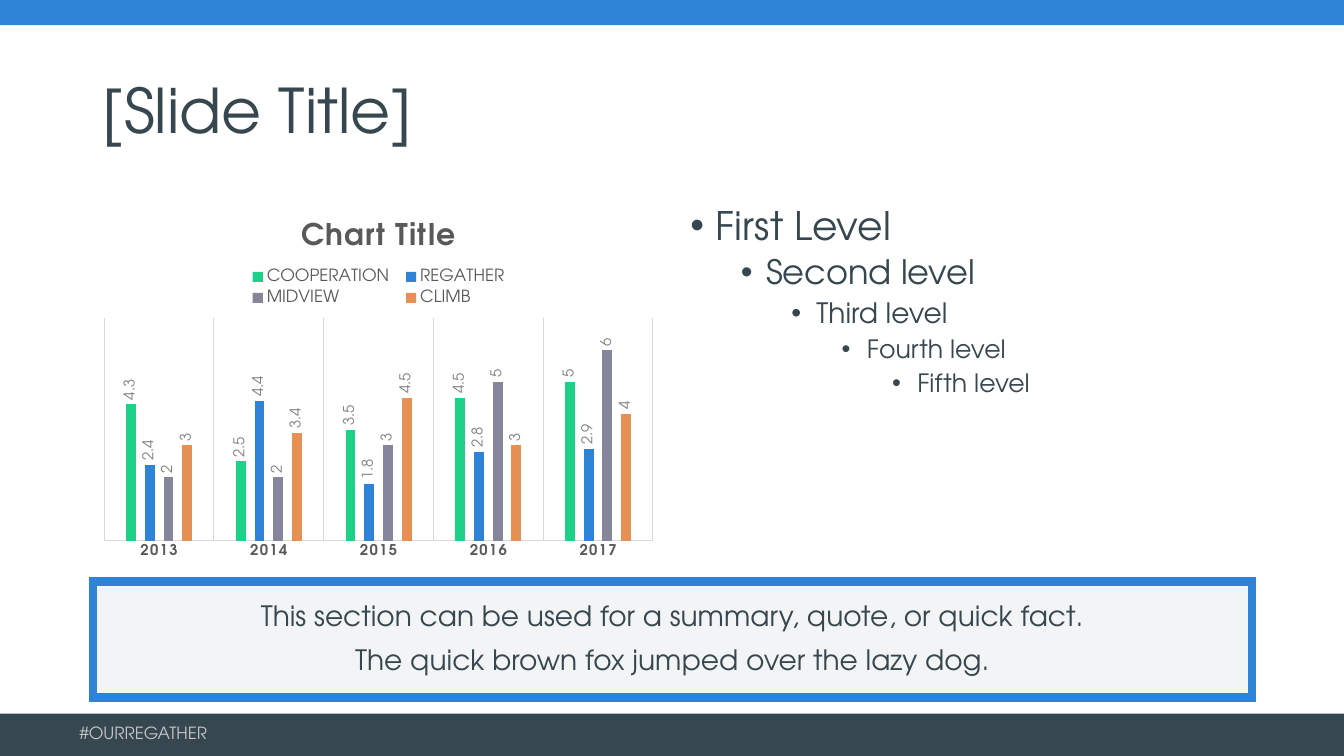
import pptx
import pptx.chart.data
import pptx.dml.color
import pptx.enum.chart
import pptx.enum.shapes
import pptx.enum.text
import pptx.oxml
import pptx.oxml.ns
import pptx.util
from lxml import etree

TITLE = "[Slide Title]"
HASHTAG = "#OURREGATHER"
CHART_TITLE = "Chart Title"
YEARS = ["2013", "2014", "2015", "2016", "2017"]
EVENTS = [
    ("COOPERATION", "1DD189", (4.3, 2.5, 3.5, 4.5, 5)),
    ("REGATHER", "2F83D6", (2.4, 4.4, 1.8, 2.8, 2.9)),
    ("MIDVIEW", "85859C", (2, 2, 3, 5, 6)),
    ("CLIMB", "E69153", (3, 3.4, 4.5, 3, 4)),
]
OUTLINE = [("First Level", 28), ("Second level", 24), ("Third level", 20),
           ("Fourth level", 18), ("Fifth level", 18)]
SUMMARY = ["This section can be used for a summary, quote, or quick fact.",
           "The quick brown fox jumped over the lazy dog."]

FONT = "TeX Gyre Adventor"
SLATE, BLUE, PALE = "37474F", "2F83D6", "F3F4F5"
FOOTER_GREY, CHART_GREY, LABEL_GREY, RULE_GREY = "C3C7CA", "595959", "808080", "D9D9D9"

WIDTH, HEIGHT = 13.33, 7.5
MARGIN, GUTTER = 0.92, 0.16
CONTENT_WIDTH = 11.5
COLUMN_WIDTH = (CONTENT_WIDTH - GUTTER) / 2
BODY_TOP, BODY_HEIGHT = 2, 3.62
FOOTER_HEIGHT = 0.42
FOOTER_TOP = HEIGHT - FOOTER_HEIGHT
INDENT, HANG = 0.5, 0.25


def rgb(colour):
    return pptx.dml.color.RGBColor.from_string(colour)


def box(left, top, width, height):
    return [pptx.util.Inches(length) for length in (left, top, width, height)]


def style(font, size, colour, bold=False):
    font.name, font.size, font.bold = FONT, pptx.util.Pt(size), bold
    font.color.rgb = rgb(colour)


def write(paragraph, text, size, colour, space=0):
    paragraph.text = text
    paragraph.line_spacing = 0.9
    paragraph.space_before = pptx.util.Pt(space)
    style(paragraph.runs[0].font, size, colour)


def add_band(slide, area, fill):
    band = slide.shapes.add_shape(pptx.enum.shapes.MSO_SHAPE.RECTANGLE, *box(*area))
    band.shadow.inherit = False
    band.fill.solid()
    band.fill.fore_color.rgb = rgb(fill)
    band.line.fill.background()
    return band


def add_text(slide, area):
    frame = slide.shapes.add_textbox(*box(*area)).text_frame
    frame.word_wrap = True
    return frame


def place(parent, after, x, y, w, h, inner=False):
    """Fix a chart part's area, in shares of the chart's size."""
    tag = pptx.oxml.ns.qn
    for old in parent.findall(tag("c:layout")):
        parent.remove(old)
    layout = etree.Element(tag("c:layout"))
    manual = etree.SubElement(layout, tag("c:manualLayout"))
    settings = [("layoutTarget", "inner")] if inner else []
    settings += [("xMode", "edge"), ("yMode", "edge"), ("x", x), ("y", y), ("w", w), ("h", h)]
    for name, value in settings:
        etree.SubElement(manual, tag("c:" + name)).set("val", str(value))
    parent.insert(after, layout)


def add_event_chart(slide):
    data = pptx.chart.data.CategoryChartData()
    data.categories = YEARS
    for name, _, values in EVENTS:
        data.add_series(name, values)
    chart = slide.shapes.add_chart(
        pptx.enum.chart.XL_CHART_TYPE.COLUMN_CLUSTERED,
        *box(MARGIN, BODY_TOP, COLUMN_WIDTH, BODY_HEIGHT), data).chart
    style(chart.font, 10, "000000")

    chart.has_title = True
    heading = chart.chart_title.text_frame.paragraphs[0]
    heading.text = CHART_TITLE
    style(heading.runs[0].font, 21.3, CHART_GREY, bold=True)
    chart.chart_title.include_in_layout = False

    chart.has_legend = True
    legend = chart.legend
    legend.position = pptx.enum.chart.XL_LEGEND_POSITION.TOP
    legend.include_in_layout = False
    style(legend.font, 12, CHART_GREY)
    place(legend._element, 1, 0.26, 0.17, 0.48, 0.13)

    plot = chart.plots[0]
    plot.gap_width, plot.overlap, plot.vary_by_categories = 444, -90, False
    place(chart._chartSpace.chart.plotArea, 0, 0.02, 0.32, 0.96, 0.61, inner=True)
    for series, (_, colour, _) in zip(plot.series, EVENTS):
        series.format.fill.solid()
        series.format.fill.fore_color.rgb = rgb(colour)
        labels = series.data_labels
        labels.show_value = True
        labels.position = pptx.enum.chart.XL_LABEL_POSITION.OUTSIDE_END
        style(labels.font, 10.6, LABEL_GREY)
        for body in labels._element.xpath("c:txPr/a:bodyPr"):
            body.set("rot", "-5400000")
            body.set("vert", "horz")

    years = chart.category_axis
    years.major_tick_mark = years.minor_tick_mark = pptx.enum.chart.XL_TICK_MARK.NONE
    years.has_major_gridlines = True
    style(years.tick_labels.font, 10.6, CHART_GREY, bold=True)
    for line in (years.format.line, years.major_gridlines.format.line):
        line.color.rgb = rgb(RULE_GREY)
        line.width = pptx.util.Pt(0.75)
    scale = chart.value_axis
    scale.minimum_scale, scale.maximum_scale = 0, 7
    scale.has_major_gridlines = False
    scale.visible = False

    spaced = chart.chart_title._element.xpath(".//a:rPr")
    spaced += years._element.xpath("c:txPr//a:defRPr")
    for properties in spaced:
        properties.set("spc", "100")


def add_outline(slide):
    left = MARGIN + COLUMN_WIDTH + GUTTER
    frame = add_text(slide, (left, BODY_TOP, COLUMN_WIDTH, BODY_HEIGHT))
    for level, (text, size) in enumerate(OUTLINE):
        paragraph = frame.add_paragraph() if level else frame.paragraphs[0]
        write(paragraph, text, size, SLATE, 5 if level else 10)
        paragraph.level = level
        properties = paragraph._p.get_or_add_pPr()
        properties.set("marL", str(pptx.util.Inches(HANG + level * INDENT)))
        properties.set("indent", str(-pptx.util.Inches(HANG)))
        for name, key, value in (("a:buFont", "typeface", "Arial"), ("a:buChar", "char", "•")):
            etree.SubElement(properties, pptx.oxml.ns.qn(name)).set(key, value)


def add_summary(slide):
    panel = add_band(slide, (MARGIN, 5.77, CONTENT_WIDTH, 1.15), PALE)
    panel.line.color.rgb = rgb(BLUE)
    panel.line.width = pptx.util.Pt(6)
    for outline in panel._element.xpath("p:spPr/a:ln"):
        etree.SubElement(outline, pptx.oxml.ns.qn("a:miter")).set("lim", "800000")
    frame = panel.text_frame
    frame.word_wrap = True
    frame.vertical_anchor = pptx.enum.text.MSO_ANCHOR.MIDDLE
    frame.margin_left = frame.margin_right = pptx.util.Inches(0.5)
    frame.margin_top = frame.margin_bottom = pptx.util.Inches(0.2)
    for number, sentence in enumerate(SUMMARY):
        paragraph = frame.add_paragraph() if number else frame.paragraphs[0]
        write(paragraph, sentence, 20, SLATE, 10)
        paragraph.alignment = pptx.enum.text.PP_ALIGN.CENTER


def main():
    deck = pptx.Presentation()
    deck.slide_width, deck.slide_height = box(0, 0, WIDTH, HEIGHT)[2:]
    slide = deck.slides.add_slide(deck.slide_layouts[5])

    add_band(slide, (0, FOOTER_TOP, WIDTH, FOOTER_HEIGHT), SLATE)
    add_band(slide, (0, 0, WIDTH, 0.25), BLUE)
    footer = add_text(slide, (0.69, FOOTER_TOP, 2.25, 0.4))
    footer.vertical_anchor = pptx.enum.text.MSO_ANCHOR.MIDDLE
    write(footer.paragraphs[0], HASHTAG, 12, FOOTER_GREY)

    title = slide.shapes.title
    title.left, title.top, title.width, title.height = box(MARGIN, 0.4, CONTENT_WIDTH, 1.45)
    title.text_frame.vertical_anchor = pptx.enum.text.MSO_ANCHOR.MIDDLE
    heading = title.text_frame.paragraphs[0]
    write(heading, TITLE, 44, SLATE)
    heading.alignment = pptx.enum.text.PP_ALIGN.LEFT

    add_event_chart(slide)
    add_outline(slide)
    add_summary(slide)
    deck.save("out.pptx")


if __name__ == "__main__":
    main()
